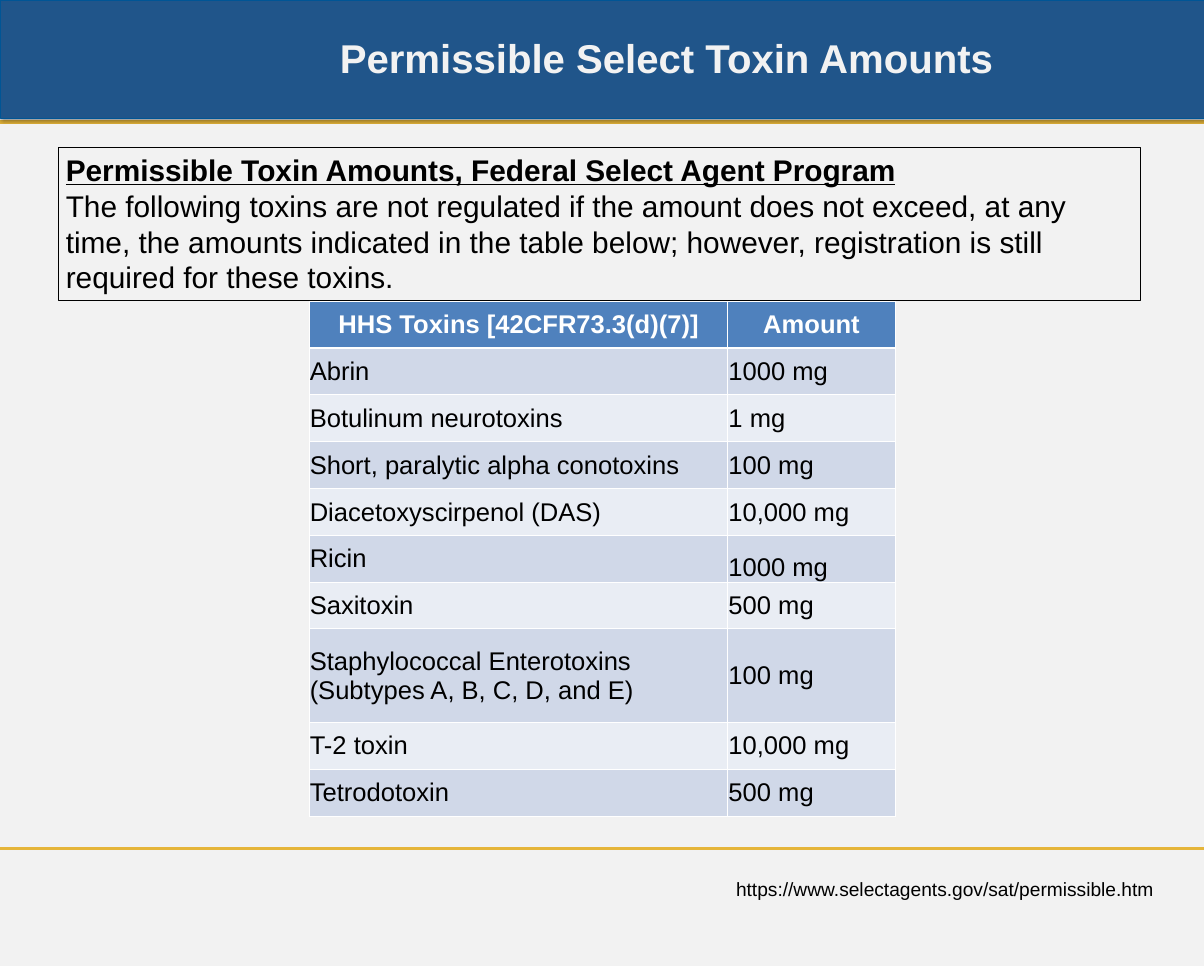
"""Build the slide on permissible select toxin amounts."""
from lxml import etree
from pptx import Presentation
from pptx.dml.color import RGBColor
from pptx.enum.shapes import MSO_CONNECTOR, MSO_SHAPE
from pptx.enum.text import MSO_ANCHOR, PP_ALIGN
from pptx.oxml import parse_xml
from pptx.oxml.ns import nsdecls, qn
from pptx.util import Cm, Pt

TITLE = "Permissible Select Toxin Amounts"
INTRO = [
    "Permissible Toxin Amounts, Federal Select Agent Program",
    "The following toxins are not regulated if the amount does not exceed, at any time, "
    "the amounts indicated in the table below; however, registration is still required "
    "for these toxins.",
]
TOXINS = [
    ("HHS Toxins [42CFR73.3(d)(7)]", "Amount"),
    ("Abrin", "1000 mg"),
    ("Botulinum neurotoxins", "1 mg"),
    ("Short, paralytic alpha conotoxins", "100 mg"),
    ("Diacetoxyscirpenol (DAS)", "10,000 mg"),
    ("Ricin", "1000 mg"),
    ("Saxitoxin", "500 mg"),
    ("Staphylococcal Enterotoxins (Subtypes A, B, C, D, and E)", "100 mg"),
    ("T-2 toxin", "10,000 mg"),
    ("Tetrodotoxin", "500 mg"),
]
URL = "https://www.selectagents.gov/sat/permissible.htm"
WIDTH, HEIGHT = 39.88, 32
COLS = (13.87, 5.54)
ROW = 1.55
TALL_ROW, LOW_ROW = 7, 5
BANDS = ("E9EDF4", "D0D8E8")
SHADOW = (
    f'<a:effectLst {nsdecls("a")}><a:outerShdw blurRad="{Pt(3.1)}" dist="{Pt(1.8)}" '
    'dir="5400000" rotWithShape="0"><a:srgbClr val="000000"><a:alpha val="35000"/>'
    "</a:srgbClr></a:outerShdw></a:effectLst>"
)


def rgb(hex_color):
    return RGBColor.from_string(hex_color)


def style(p, size, color="000000", bold=False, underline=False):
    for r in p.runs:
        r.font.name, r.font.size = "Arial", Pt(size)
        r.font.bold, r.font.underline = bold, underline
        r.font.color.rgb = rgb(color)


def add_rule(s, y):
    line = s.shapes.add_connector(MSO_CONNECTOR.STRAIGHT, 0, Cm(y), Cm(WIDTH), Cm(y))
    line.line.color.rgb = rgb("E5B53A")
    line.line.width = Pt(3)
    etree.SubElement(line._element.spPr, qn("a:effectLst"))


def add_box(s, left, top, width, height, line, fill=None):
    sp = s.shapes.add_shape(MSO_SHAPE.RECTANGLE, Cm(left), Cm(top), Cm(width), Cm(height))
    sp.shadow.inherit = False
    if fill:
        sp.fill.solid()
        sp.fill.fore_color.rgb = rgb(fill)
    else:
        sp.fill.background()
    sp.line.color.rgb = rgb(line)
    sp.line.width = Pt(0.75)
    return sp


def set_borders(cell, bottom):
    tcPr = cell._tc.get_or_add_tcPr()
    for i, (side, width) in enumerate((("L", 1), ("R", 1), ("T", 1), ("B", bottom))):
        tcPr.insert(i, parse_xml(
            f'<a:ln{side} {nsdecls("a")} w="{Pt(width)}"><a:solidFill>'
            f'<a:srgbClr val="FFFFFF"/></a:solidFill></a:ln{side}>'))


def add_toxin_table(s):
    frame = s.shapes.add_table(len(TOXINS), len(COLS), Cm(10.24), Cm(9.98),
                               Cm(sum(COLS)), Cm(ROW * (len(TOXINS) + 1)))
    table = frame.table
    for col, width in zip(table.columns, COLS):
        col.width = Cm(width)
    for i, texts in enumerate(TOXINS):
        header = i == 0
        table.rows[i].height = Cm(ROW * (2 if i == TALL_ROW else 1))
        for j, text in enumerate(texts):
            cell = table.cell(i, j)
            cell.text = text
            cell.margin_left = cell.margin_right = cell.margin_top = Cm(0.02)
            cell.margin_bottom = 0
            low = (i, j) == (LOW_ROW, 1)
            cell.vertical_anchor = MSO_ANCHOR.BOTTOM if low else MSO_ANCHOR.MIDDLE
            cell.fill.solid()
            cell.fill.fore_color.rgb = rgb("4F81BD" if header else BANDS[i % 2])
            set_borders(cell, 3 if header else 1)
            p = cell.text_frame.paragraphs[0]
            p.alignment = PP_ALIGN.CENTER if header else PP_ALIGN.LEFT
            style(p, 24, "FFFFFF" if header else "000000", bold=header)


def main():
    prs = Presentation()
    prs.slide_width, prs.slide_height = Cm(WIDTH), Cm(HEIGHT)
    s = prs.slides.add_slide(prs.slide_layouts[5])
    s.background.fill.solid()
    s.background.fill.fore_color.rgb = rgb("F2F2F2")

    add_rule(s, 4.04)
    bar = add_box(s, 0, 0, WIDTH, 3.91, "005595", "20558A")
    spPr = bar._element.spPr
    spPr.replace(spPr.find(qn("a:effectLst")), parse_xml(SHADOW))
    add_rule(s, 28.12)

    title = s.shapes.title
    s.shapes._spTree.append(title._element)
    title.left, title.top, title.width, title.height = Cm(11), Cm(0.76), Cm(26.9), Cm(2.31)
    tf = title.text_frame
    tf.text = TITLE
    tf.vertical_anchor = MSO_ANCHOR.MIDDLE
    tf.paragraphs[0].alignment = PP_ALIGN.LEFT
    style(tf.paragraphs[0], 37.7, "F2F2F2", bold=True)

    tf = add_box(s, 1.93, 4.9, 35.86, 5.05, "000000").text_frame
    tf.word_wrap = True
    tf.vertical_anchor = MSO_ANCHOR.TOP
    tf.text = "\n".join(INTRO)
    for i, p in enumerate(tf.paragraphs):
        p.alignment = PP_ALIGN.LEFT
        style(p, 28, bold=i == 0, underline=i == 0)

    add_toxin_table(s)

    tf = s.shapes.add_textbox(Cm(24.13), Cm(28.93), Cm(14.48), Cm(1.02)).text_frame
    tf.word_wrap = False
    tf.text = URL
    style(tf.paragraphs[0], 18)

    prs.save("out.pptx")


if __name__ == "__main__":
    main()
